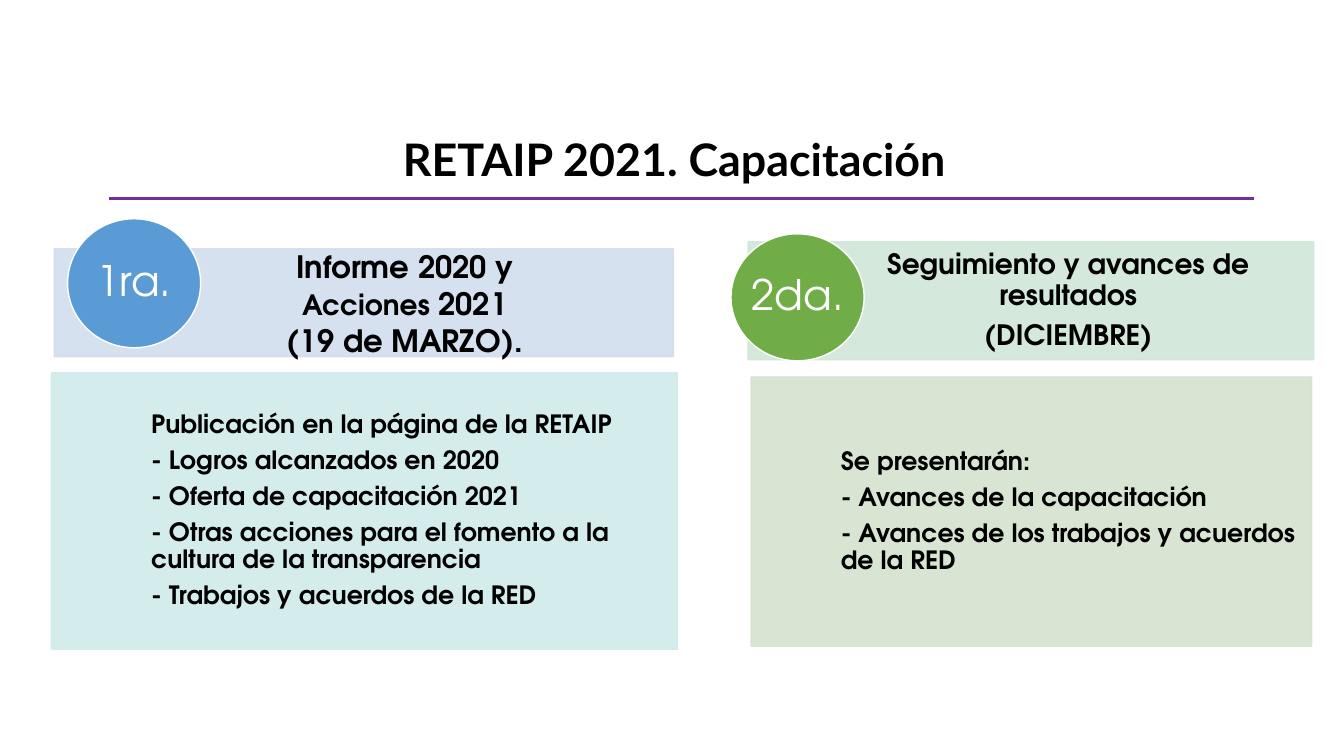
from lxml import etree
from pptx import Presentation
from pptx.dml.color import RGBColor
from pptx.enum import shapes, text
from pptx.oxml.ns import qn
from pptx.util import Inches, Pt

BODY_FONT = "TeX Gyre Adventor"
BLACK, WHITE = "000000", "FFFFFF"
CENTER, LEFT = text.PP_ALIGN.CENTER, text.PP_ALIGN.LEFT
RECT, OVAL = shapes.MSO_SHAPE.RECTANGLE, shapes.MSO_SHAPE.OVAL
INDENT = 0.16

TITLE = "RETAIP 2021. Capacitación"
RULE = {"x1": 1.08, "x2": 12.44, "y": 1.97, "color": "7030A0", "width": 2.25}

SESSIONS = [
    {
        "header": {"box": (0.54, 2.47, 6.14, 1.07), "fill": "D2DEEF", "pad": 0.17, "tight": False,
                   "lines": [[("Informe 2020 y", 22)], [("Acciones", 20), (" 2021", 22)],
                             [("(19 de MARZO).", 22)]]},
        "detail": {"box": (0.51, 3.7, 6.21, 2.74), "fill": "D0ECEA",
                   "lines": ["Publicación en la página de la RETAIP",
                             "- Logros alcanzados en 2020",
                             "- Oferta de capacitación 2021",
                             "- Otras acciones para el fomento a la cultura de la transparencia",
                             "- Trabajos y acuerdos de la RED"]},
        "badge": {"box": (0.67, 2.17, 1.32, 1.28), "fill": "5B9BD5", "label": "1ra."},
    },
    {
        "header": {"box": (7.42, 2.4, 5.61, 1.17), "fill": "D0E7D8", "pad": 0.16, "tight": True,
                   "lines": [[("Seguimiento y avances de resultados", 20)],
                             [("(DICIEMBRE)", 20)]]},
        "detail": {"box": (7.45, 3.74, 5.56, 2.67), "fill": "D5E3CF",
                   "lines": ["Se presentarán:",
                             "- Avances de la capacitación",
                             "- Avances de los trabajos y acuerdos de la RED"]},
        "badge": {"box": (7.25, 2.32, 1.32, 1.26), "fill": "70AD47", "label": "2da."},
    },
]


def rgb(value):
    return RGBColor.from_string(value)


def write(sp, lines, align, insets, color=BLACK, font=BODY_FONT, bold=True, tight=True,
          anchor=text.MSO_ANCHOR.MIDDLE):
    tf = sp.text_frame
    left, top, right, bottom = map(Inches, insets)
    frame = {"word_wrap": True, "vertical_anchor": anchor, "margin_left": left,
             "margin_top": top, "margin_right": right, "margin_bottom": bottom}
    for name, value in frame.items():
        setattr(tf, name, value)
    for i, line in enumerate(lines):
        p = tf.add_paragraph() if i else tf.paragraphs[0]
        p.alignment = align
        if tight:
            p.line_spacing = 0.9
            p.space_after = Pt(round(0.35 * line[0][1], 1))
        for words, size in line:
            r = p.add_run()
            r.text = words
            for name, value in {"name": font, "size": Pt(size), "bold": bold}.items():
                setattr(r.font, name, value)
            r.font.color.rgb = rgb(color)


def add_block(slide, kind, box, fill, line, alpha=None):
    sp = slide.shapes.add_shape(kind, *map(Inches, box))
    sp.shadow.inherit = False
    sp.fill.solid()
    sp.fill.fore_color.rgb = rgb(fill)
    sp.line.color.rgb = rgb(line)
    sp.line.width = Pt(1)
    if alpha:
        for clr in sp._element.spPr.iter(qn("a:srgbClr")):
            etree.SubElement(clr, qn("a:alpha")).set("val", str(alpha * 1000))
    return sp


def add_session(slide, header, detail, badge):
    for part, align, pad, tight, lines in (
        (header, CENTER, header["pad"], header["tight"], header["lines"]),
        (detail, LEFT, 0.14, True, [[(words, 18)] for words in detail["lines"]]),
    ):
        sp = add_block(slide, RECT, part["box"], part["fill"], part["fill"], alpha=90)
        insets = (round(part["box"][2] * INDENT, 2), pad, pad, pad)
        write(sp, lines, align, insets, tight=tight)
    sp = add_block(slide, OVAL, badge["box"], badge["fill"], WHITE)
    write(sp, [[(badge["label"], 30)]], CENTER, (0, 0, 0, 0), color=WHITE, bold=False)


def main():
    prs = Presentation()
    prs.slide_width, prs.slide_height = Inches(13.33), Inches(7.5)
    slide = prs.slides.add_slide(prs.slide_layouts[6])

    for session in SESSIONS:
        add_session(slide, **session)

    title = slide.shapes.add_textbox(*map(Inches, (1.93, 1.32, 9.52, 0.89)))
    write(title, [[(TITLE, 32)]], CENTER, (0.1, 0.05, 0.1, 0.05), font="Lato",
          anchor=text.MSO_ANCHOR.TOP)

    rule = slide.shapes.add_connector(shapes.MSO_CONNECTOR.STRAIGHT, Inches(RULE["x1"]),
                                      Inches(RULE["y"]), Inches(RULE["x2"]), Inches(RULE["y"]))
    rule.line.color.rgb = rgb(RULE["color"])
    rule.line.width = Pt(RULE["width"])
    etree.SubElement(rule._element.spPr, qn("a:effectLst"))

    prs.save("out.pptx")


if __name__ == "__main__":
    main()
